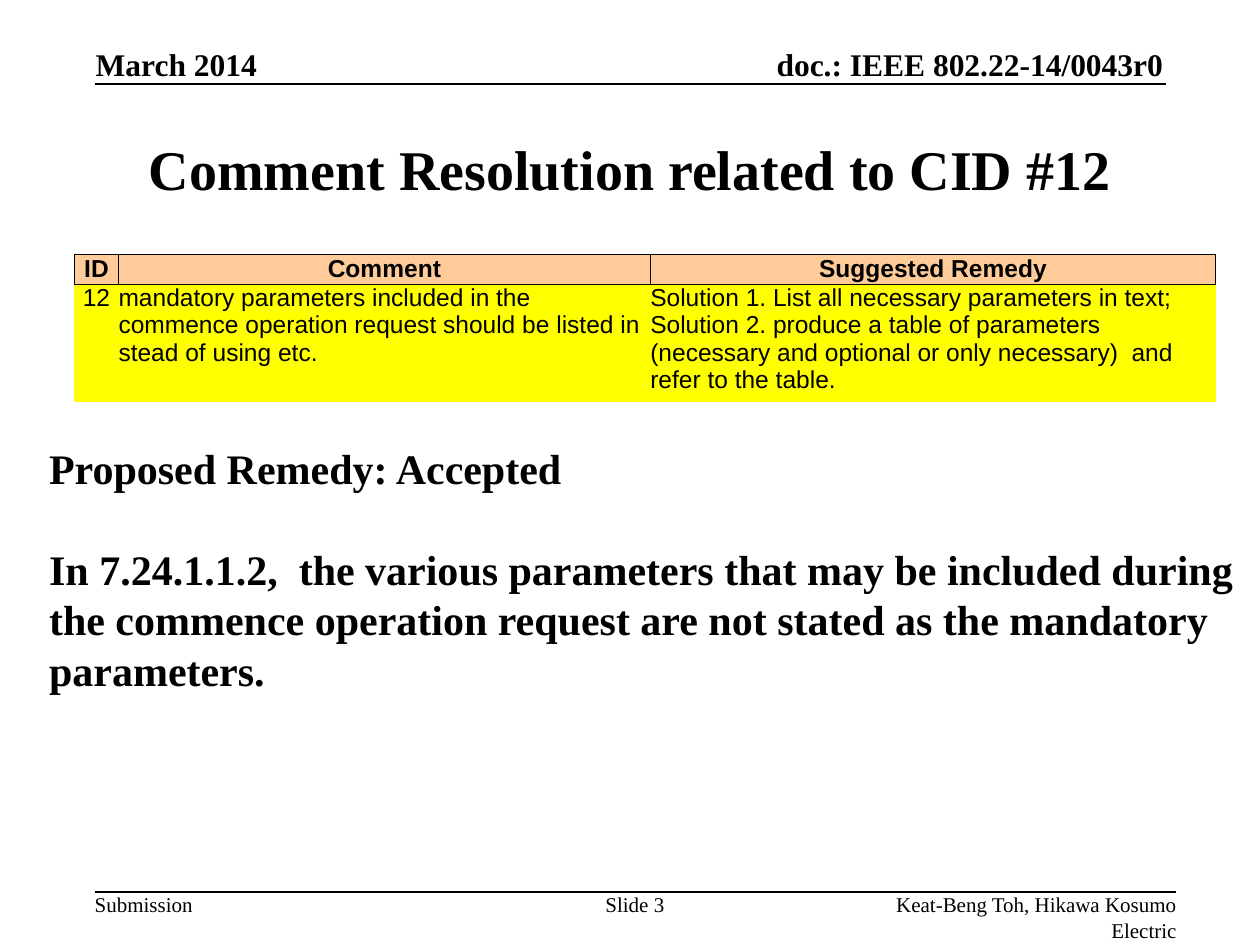
import dataclasses

import lxml.etree
import pptx
import pptx.dml.color
import pptx.enum.shapes
import pptx.enum.text
import pptx.oxml
import pptx.oxml.ns
import pptx.util

Cm = pptx.util.Cm
Pt = pptx.util.Pt
Align = pptx.enum.text.PP_ALIGN
Anchor = pptx.enum.text.MSO_ANCHOR


@dataclasses.dataclass(frozen=True)
class Theme:
    ink: str = "000000"
    header_fill: str = "FFCC99"
    row_fill: str = "FFFF00"
    serif: str = "Times New Roman"
    sans: str = "Arial"
    title: float = 32
    body: float = 24
    body_leading: float = 28.8
    header: float = 18
    table: float = 14
    footer: float = 12
    rule: float = 1
    border: float = 0.5


class CommentSlide:
    """Draws the parts of a comment resolution slide in one theme."""

    def __init__(self, slide, theme):
        self.slide = slide
        self.theme = theme

    def style(self, paragraph, size, face, bold, align):
        paragraph.alignment = align
        font = paragraph.font
        font.size = Pt(size)
        font.name = face
        font.bold = bold
        font.color.rgb = pptx.dml.color.RGBColor.from_string(self.theme.ink)

    def text(self, lines, box, size, bold=False, align=Align.LEFT,
             anchor=Anchor.TOP, inset=(0, 0), wrap=False):
        frame = self.slide.shapes.add_textbox(*map(Cm, box)).text_frame
        frame.word_wrap = wrap
        frame.vertical_anchor = anchor
        frame.margin_left = frame.margin_right = Cm(inset[0])
        frame.margin_top = frame.margin_bottom = Cm(inset[1])
        frame.text = "\n".join(lines)
        for paragraph in frame.paragraphs:
            self.style(paragraph, size, self.theme.serif, bold, align)
        return frame.paragraphs

    def rule(self, left, right, top):
        line = self.slide.shapes.add_connector(
            pptx.enum.shapes.MSO_CONNECTOR.STRAIGHT,
            Cm(left), Cm(top), Cm(right), Cm(top))
        line.line.width = Pt(self.theme.rule)
        line.line.color.rgb = pptx.dml.color.RGBColor.from_string(self.theme.ink)
        lxml.etree.SubElement(line.element.spPr, pptx.oxml.ns.qn("a:effectLst"))

    def borders(self, cell, drawn):
        properties = cell._tc.get_or_add_tcPr()
        for side in "LRTB":
            paint = (f'<a:solidFill><a:srgbClr val="{self.theme.ink}"/></a:solidFill>'
                     if side in drawn else "<a:noFill/>")
            properties.append(pptx.oxml.parse_xml(
                f'<a:ln{side} {pptx.oxml.ns.nsdecls("a")} '
                f'w="{Pt(self.theme.border)}">{paint}</a:ln{side}>'))

    def table(self, rows, left, top, widths, heights):
        table = self.slide.shapes.add_table(
            len(rows), len(widths), Cm(left), Cm(top),
            Cm(sum(widths)), Cm(sum(heights))).table
        table.first_row = table.horz_banding = False
        for column, width in zip(table.columns, widths):
            column.width = Cm(width)
        for r, (row, height) in enumerate(zip(rows, heights)):
            table.rows[r].height = Cm(height)
            heading = r == 0
            for c, words in enumerate(row):
                cell = table.cell(r, c)
                cell.text = words
                cell.margin_left = cell.margin_right = 0
                cell.margin_top = cell.margin_bottom = 0
                cell.vertical_anchor = Anchor.MIDDLE if heading else Anchor.TOP
                self.borders(cell, "LRTB" if heading else "T")
                cell.fill.solid()
                cell.fill.fore_color.rgb = pptx.dml.color.RGBColor.from_string(
                    self.theme.header_fill if heading else self.theme.row_fill)
                self.style(cell.text_frame.paragraphs[0], self.theme.table,
                           self.theme.sans, heading,
                           Align.CENTER if heading or c == 0 else Align.LEFT)


def main():
    deck = pptx.Presentation()
    deck.slide_width, deck.slide_height = Cm(25.4), Cm(19.05)
    theme = Theme()
    page = CommentSlide(deck.slides.add_slide(deck.slide_layouts[6]), theme)

    page.text(["March 2014"], (1.93, 0.91, 3.28, 0.77), theme.header,
              bold=True, anchor=Anchor.BOTTOM)
    page.text(["doc.: IEEE 802.22-14/0043r0"], (14.3, 0.91, 9.15, 0.77),
              theme.header, bold=True, align=Align.RIGHT,
              anchor=Anchor.BOTTOM, wrap=True)
    page.rule(1.91, 23.5, 1.7)

    page.text(["Comment Resolution related to CID #12"],
              (1.91, 1.91, 21.59, 2.97), theme.title, bold=True,
              align=Align.CENTER, anchor=Anchor.MIDDLE,
              inset=(0.25, 0.13), wrap=True)

    page.table(
        [["ID", "Comment", "Suggested Remedy"],
         ["12",
          "mandatory parameters included in the commence operation request "
          "should be listed in stead of using etc.",
          "Solution 1. List all necessary parameters in text; Solution 2. "
          "produce a table of parameters (necessary and optional or only "
          "necessary)  and refer to the table."]],
        1.5, 5.13, widths=(0.89, 10.72, 11.4), heights=(0.55, 2.21))

    remedy = page.text(
        ["Proposed Remedy: Accepted",
         "In 7.24.1.1.2,  the various parameters that may be included during",
         "the commence operation request are not stated as the mandatory",
         "parameters."],
        (0.74, 8.79, 25.65, 5.38), theme.body, bold=True,
        inset=(0.25, 0.13), wrap=True)
    for paragraph in remedy:
        paragraph.line_spacing = Pt(theme.body_leading)
    remedy[1].space_before = Pt(theme.body_leading)

    page.rule(1.91, 23.7, 17.98)
    for words, left, width, align in (
            ("Submission", 1.91, 1.98, Align.LEFT),
            ("Slide 3", 11.96, 1.68, Align.CENTER),
            ("Keat-Beng Toh, Hikawa Kosumo Electric", 16.66, 7.06, Align.RIGHT)):
        page.text([words], (left, 17.98, width, 0.51), theme.footer, align=align)

    deck.save("out.pptx")


if __name__ == "__main__":
    main()
